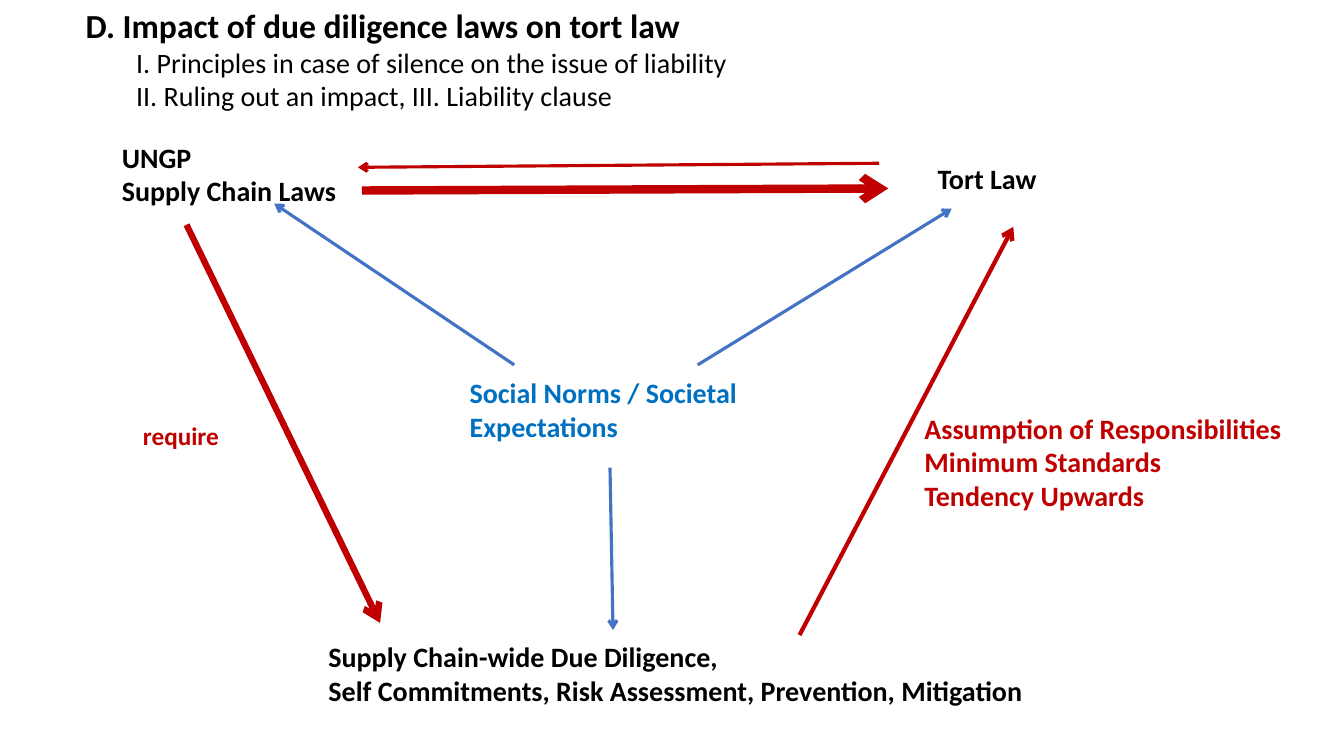
from dataclasses import dataclass

from pptx import Presentation
from pptx.dml.color import RGBColor
from pptx.enum import shapes, text
from pptx.oxml.ns import qn
from pptx.util import Inches, Pt
from lxml import etree


@dataclass(frozen=True)
class Theme:
    font: str = "Calibri"
    black: str = "000000"
    red: str = "C00000"
    blue: str = "0070C0"
    link: str = "4472C4"
    head: int = 24
    body: int = 20
    small: int = 18


theme = Theme()


def write(frame, lines, size, color, bold=True):
    """Fill a frame with one paragraph per line."""
    frame.text = "\n".join(lines)
    frame.word_wrap = True
    for para in frame.paragraphs:
        para.alignment = text.PP_ALIGN.LEFT
        para.font.name = theme.font
        para.font.size = Pt(size)
        para.font.bold = bold
        para.font.color.rgb = RGBColor.from_string(color)


def arrow(start, end, color, width):
    """Draw a line with an open arrowhead at its end."""
    line = slide.shapes.add_connector(
        shapes.MSO_CONNECTOR.STRAIGHT, *map(Inches, start + end))
    line.line.color.rgb = RGBColor.from_string(color)
    line.line.width = Pt(width)
    tail = etree.SubElement(line.line._get_or_add_ln(), qn("a:tailEnd"))
    tail.set("type", "arrow")
    etree.SubElement(line._element.spPr, qn("a:effectLst"))


deck = Presentation()
deck.slide_width, deck.slide_height = Inches(13.33), Inches(7.5)
slide = deck.slides.add_slide(deck.slide_layouts[5])

# Title with its two outline points
title = slide.shapes.title
title.left, title.top = Inches(0.75), Inches(0)
title.width, title.height = Inches(12.25), Inches(1.18)
frame = title.text_frame
write(frame, [
    "D. Impact of due diligence laws on tort law",
    "I. Principles in case of silence on the issue of liability",
    "II. Ruling out an impact, III. Liability clause",
], theme.body, theme.black, bold=False)
frame.vertical_anchor = text.MSO_ANCHOR.TOP
frame.auto_size = text.MSO_AUTO_SIZE.NONE
head, *points = frame.paragraphs
head.font.size, head.font.bold = Pt(theme.head), True
for point in points:
    props = point._p.get_or_add_pPr()
    props.set("marL", str(Inches(1.06)))
    props.set("indent", str(Inches(-0.56)))

# Labels: left, top, width, height, lines, size, colour
labels = [
    (1.11, 1.34, 2.43, 0.77, ["UNGP", "Supply Chain Laws"],
     theme.body, theme.black),
    (9.2, 1.55, 1.88, 0.44, ["Tort Law"], theme.body, theme.black),
    (3.16, 6.3, 7.64, 0.77,
     ["Supply Chain-wide Due Diligence,",
      "Self Commitments, Risk Assessment, Prevention, Mitigation"],
     theme.body, theme.black),
    (1.32, 4.12, 1.27, 0.4, ["require"], theme.small, theme.red),
    (9.07, 4.03, 3.93, 1.11,
     ["Assumption of Responsibilities", "Minimum Standards",
      "Tendency Upwards"], theme.body, theme.red),
    (4.56, 3.68, 3.26, 0.77, ["Social Norms / Societal Expectations"],
     theme.body, theme.blue),
]
for *place, lines, size, color in labels:
    box = slide.shapes.add_textbox(*map(Inches, place))
    write(box.text_frame, lines, size, color)

# Arrows between the laws, tort law and due diligence
for start, end, width in [
    ((8.72, 1.62), (3.55, 1.66), 2.25),
    ((3.59, 1.89), (8.81, 1.87), 6),
    ((1.85, 2.23), (3.77, 6.18), 4.5),
    ((7.93, 6.3), (10.05, 2.25), 3),
]:
    arrow(start, end, theme.red, width)

# Arrows out from the social norms
for start, end in [
    ((5.1, 3.62), (2.72, 2.02)),
    ((6.92, 3.62), (9.44, 2.07)),
    ((6.05, 4.64), (6.08, 6.25)),
]:
    arrow(start, end, theme.link, 2.25)

deck.save("out.pptx")
